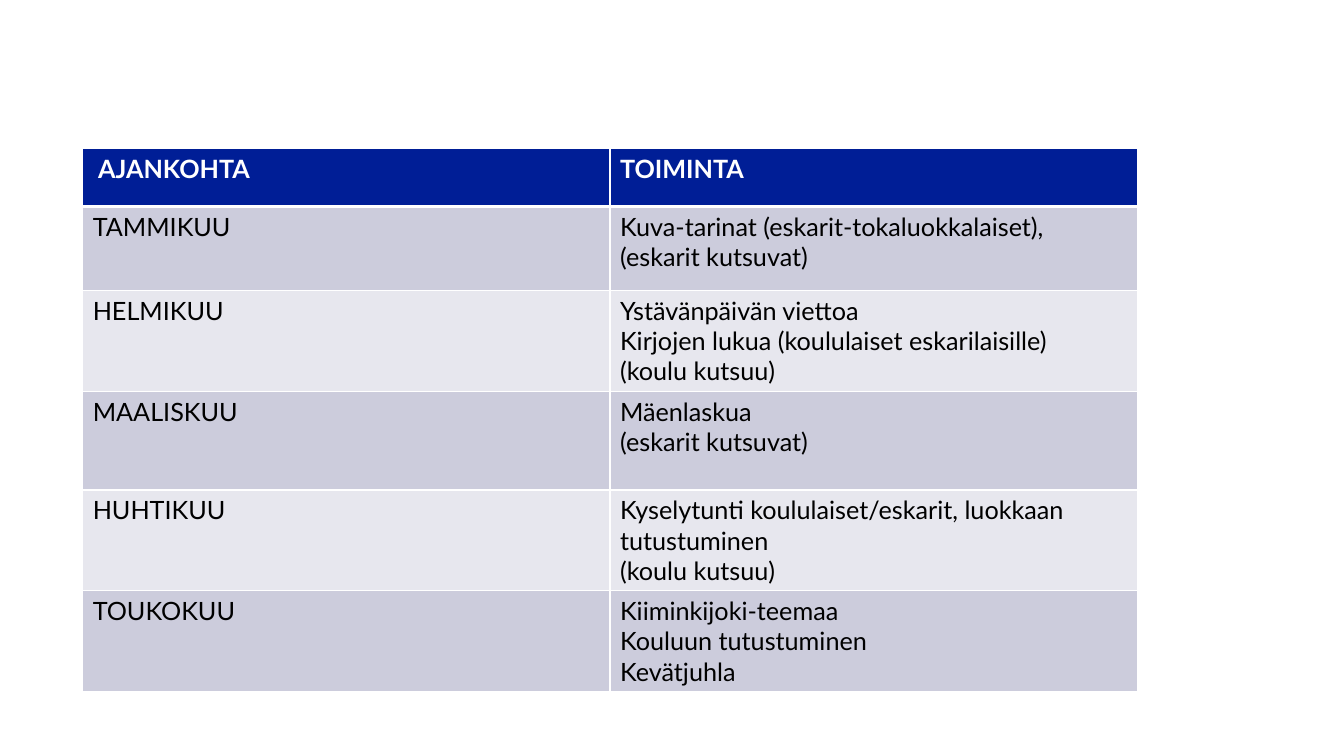
from dataclasses import dataclass

from lxml.etree import SubElement
from pptx import Presentation
from pptx.dml.color import RGBColor as RGB
from pptx.oxml.ns import qn
from pptx.util import Inches, Pt

HEADER = (" AJANKOHTA", "TOIMINTA")
MONTHS = [
    ("TAMMIKUU", "Kuva-tarinat (eskarit-tokaluokkalaiset), (eskarit kutsuvat)"),
    ("HELMIKUU", "Ystävänpäivän viettoa\n"
                 "Kirjojen lukua (koululaiset eskarilaisille)\n"
                 "(koulu kutsuu)"),
    ("MAALISKUU", "Mäenlaskua\n(eskarit kutsuvat)"),
    ("HUHTIKUU", "Kyselytunti koululaiset/eskarit, luokkaan tutustuminen\n"
                 "(koulu kutsuu)"),
    ("TOUKOKUU", "Kiiminkijoki-teemaa\nKouluun tutustuminen\nKevätjuhla"),
]
ROW_HEIGHTS = (0.58, 0.83, 0.99, 0.98, 1.0, 1.0)
LEFT, TOP, COL_WIDTH = 0.82, 1.47, 5.23


@dataclass(frozen=True)
class Theme:
    font: str = "Lato"
    size: float = 18
    header_fill: str = "001E96"
    header_text: str = "FFFFFF"
    bands: tuple = ("CCCCDC", "E7E7EE")
    text: str = "000000"
    border: str = "FFFFFF"
    thin: float = 0.96
    thick: float = 3


THEME = Theme()


def set_borders(cell, **widths):
    """Draw the cell's sides, given as L, R, T, B widths in points."""
    tc_pr = cell._tc.get_or_add_tcPr()
    for i, (side, width) in enumerate(widths.items()):
        ln = SubElement(tc_pr, qn(f"a:ln{side}"), w=str(Pt(width)))
        fill = SubElement(ln, qn("a:solidFill"))
        SubElement(fill, qn("a:srgbClr"), val=THEME.border)
        tc_pr.insert(i, ln)  # borders must precede the cell fill


def fill_cell(cell, text, row):
    is_header = row == 0
    fill = THEME.header_fill if is_header else THEME.bands[(row - 1) % 2]
    cell.fill.solid()
    cell.fill.fore_color.rgb = RGB.from_string(fill)
    set_borders(cell, L=THEME.thin, R=THEME.thin,
                T=THEME.thick if row == 1 else THEME.thin,
                B=THEME.thick if is_header else THEME.thin)
    cell.text = text
    for p in cell.text_frame.paragraphs:
        p.font.name = THEME.font
        p.font.size = Pt(THEME.size)
        p.font.bold = is_header
        color = THEME.header_text if is_header else THEME.text
        p.font.color.rgb = RGB.from_string(color)


def main():
    prs = Presentation()
    prs.slide_width, prs.slide_height = Inches(13.33), Inches(7.5)
    s = prs.slides.add_slide(prs.slide_layouts[6])

    rows = [HEADER, *MONTHS]
    table = s.shapes.add_table(
        len(rows), len(HEADER), Inches(LEFT), Inches(TOP),
        Inches(COL_WIDTH * len(HEADER)), Inches(sum(ROW_HEIGHTS))).table
    for column in table.columns:
        column.width = Inches(COL_WIDTH)
    for i, (texts, height) in enumerate(zip(rows, ROW_HEIGHTS)):
        table.rows[i].height = Inches(height)
        for j, text in enumerate(texts):
            fill_cell(table.cell(i, j), text, i)

    prs.save("out.pptx")


if __name__ == "__main__":
    main()
